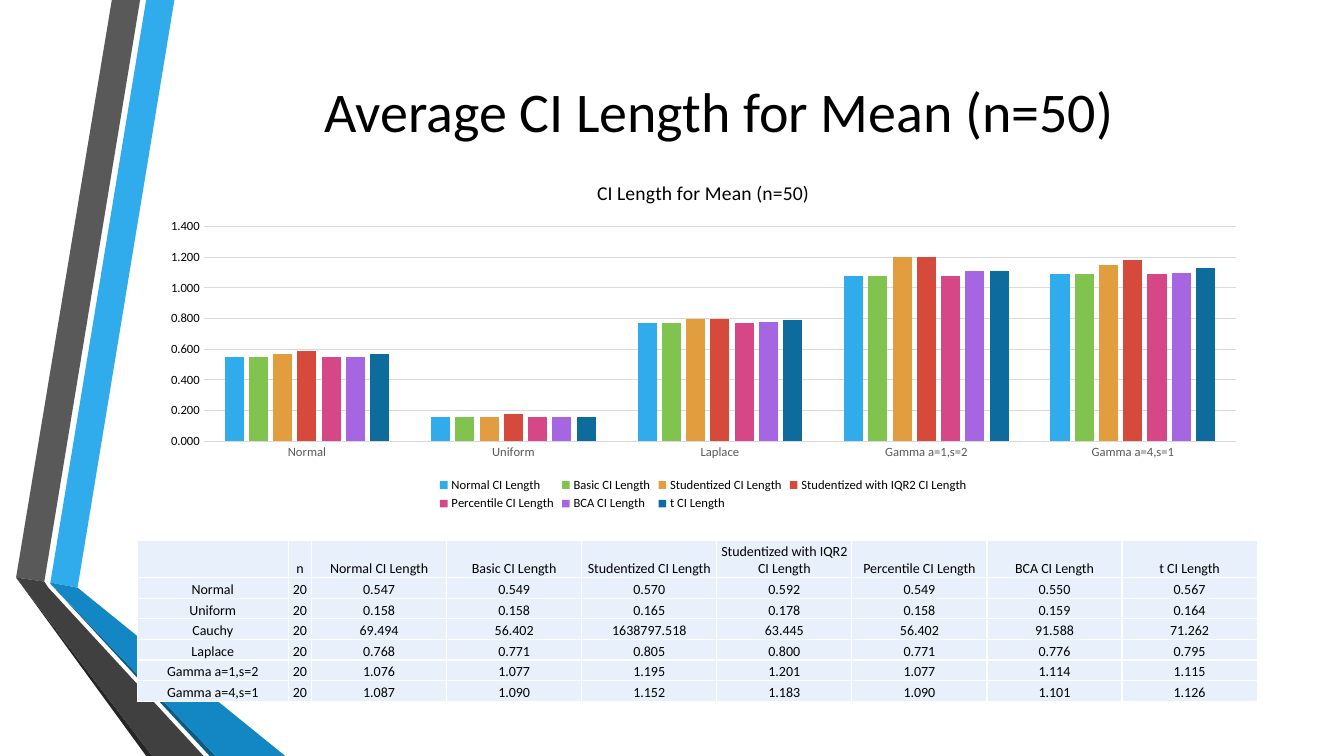
from pptx import Presentation
from pptx.util import Inches, Pt
from pptx.dml.color import RGBColor as RGB
from pptx.chart.data import CategoryChartData as ChartData
from pptx.enum.chart import XL_CHART_TYPE as Kind, XL_LEGEND_POSITION as Spot, XL_TICK_MARK as Tick
from pptx.enum.text import MSO_ANCHOR as Anchor, PP_ALIGN as Align
from pptx.oxml import parse_xml
from pptx.oxml.ns import nsdecls, qn

BLACK = RGB(0, 0, 0)
GRAY = RGB(0x59, 0x59, 0x59)
RULE = RGB(0xD9, 0xD9, 0xD9)
PALE = RGB(0xE8, 0xF1, 0xFB)
BLUE = RGB(0x30, 0xAC, 0xEC)
NAVY = RGB(0x0C, 0x5A, 0x82)
DEEP = RGB(0x12, 0x87, 0xC3)
DARK = RGB(0x26, 0x26, 0x26)
COAL = RGB(0x40, 0x40, 0x40)
GREEN = RGB(0x80, 0xC3, 0x4F)
GOLD = RGB(0xE2, 0x9D, 0x3E)
RED = RGB(0xD6, 0x4A, 0x3B)
PINK = RGB(0xD6, 0x47, 0x87)
VIOLET = RGB(0xA6, 0x66, 0xE1)
TEAL = RGB(0x0E, 0x6C, 0x9C)
FACE = "Calibri"


def style(font, size, color=BLACK):
    font.name, font.size, font.bold = FACE, Pt(size), False
    font.color.rgb = color


def write(frame, text, size=10, color=BLACK, align=Align.CENTER):
    para = frame.paragraphs[0]
    para.alignment = align
    run = para.add_run()
    run.text = text
    style(run.font, size, color)


deck = Presentation()
deck.slide_width, deck.slide_height = Inches(13.33), Inches(7.5)
slide = deck.slides.add_slide(deck.slide_layouts[5])
shapes = slide.shapes

ribbons = [
    (BLUE, [(0.5, 5.78), (0.77, 5.83), (1.73, 0), (1.45, 0)]),
    (GRAY, [(1.39, 0), (1.11, 0), (0.16, 5.73), (0.44, 5.77)]),
    (DARK, [(0.16, 5.73), (1.45, 7.5), (1.51, 7.5)]),
    (NAVY, [(0.5, 5.79), (2.08, 7.5), (2.14, 7.5)]),
    (DEEP, [(0.5, 5.79), (2.14, 7.5), (2.83, 7.5), (0.77, 5.83), (0.5, 5.78)]),
    (COAL, [(2.02, 7.5), (0.48, 5.83), (0.44, 5.77), (0.16, 5.73), (1.51, 7.5)]),
]
for color, points in ribbons:
    start, *rest = [(Inches(x), Inches(y)) for x, y in points]
    path = shapes.build_freeform(*start)
    path.add_line_segments(rest, close=True)
    ribbon = path.convert_to_shape()
    ribbon.shadow.inherit = False
    ribbon.fill.solid()
    ribbon.fill.fore_color.rgb = color
    ribbon.line.fill.background()

title = shapes.title
title.left, title.top = Inches(1.65), Inches(0.13)
title.width, title.height = Inches(10.96), Inches(1.92)
title.text_frame.vertical_anchor = Anchor.MIDDLE
write(title.text_frame, "Average CI Length for Mean (n=50)", size=40)

laws = ["Normal", "Uniform", "Laplace", "Gamma a=1,s=2", "Gamma a=4,s=1"]
series = [
    ("Normal CI Length", BLUE, [0.55, 0.16, 0.77, 1.08, 1.09]),
    ("Basic CI Length", GREEN, [0.55, 0.16, 0.77, 1.08, 1.09]),
    ("Studentized CI Length", GOLD, [0.57, 0.16, 0.8, 1.2, 1.15]),
    ("Studentized with IQR2 CI Length", RED, [0.59, 0.18, 0.8, 1.2, 1.18]),
    ("Percentile CI Length", PINK, [0.55, 0.16, 0.77, 1.08, 1.09]),
    ("BCA CI Length", VIOLET, [0.55, 0.16, 0.78, 1.11, 1.1]),
    ("t CI Length", TEAL, [0.57, 0.16, 0.79, 1.11, 1.13]),
]
data = ChartData(number_format="0.000")
data.categories = laws
for name, hue, vals in series:
    data.add_series(name, vals)
chart = shapes.add_chart(Kind.COLUMN_CLUSTERED, Inches(1.47), Inches(1.62),
                         Inches(11.01), Inches(3.49), data).chart
style(chart.font, 10)
chart.has_title = True
write(chart.chart_title.text_frame, "CI Length for Mean (n=50)", size=14)
chart.chart_title.include_in_layout = False
chart.has_legend = True
chart.legend.position = Spot.BOTTOM
chart.legend.include_in_layout = False
style(chart.legend.font, 9)

plot = chart.plots[0]
plot.gap_width, plot.overlap, plot.vary_by_categories = 219, -27, False
for bars, (name, hue, vals) in zip(plot.series, series):
    bars.format.fill.solid()
    bars.format.fill.fore_color.rgb = hue

across, up = chart.category_axis, chart.value_axis
for axis, color in ((across, GRAY), (up, BLACK)):
    axis.major_tick_mark = axis.minor_tick_mark = Tick.NONE
    style(axis.tick_labels.font, 9, color)
up.minimum_scale, up.maximum_scale, up.major_unit = 0, 1.4, 0.2
up.tick_labels.number_format = "0.000"
up.tick_labels.number_format_is_linked = False
up.format.line.fill.background()
for line in (across.format.line, up.major_gridlines.format.line):
    line.color.rgb = RULE
    line.width = Pt(0.75)

area = chart._chartSpace.chart.plotArea
for old in area.findall(qn("c:layout")):
    area.remove(old)
area.insert(0, parse_xml(
    f'<c:layout {nsdecls("c")}><c:manualLayout><c:layoutTarget val="inner"/>'
    '<c:xMode val="edge"/><c:yMode val="edge"/><c:x val="0.05"/><c:y val="0.18"/>'
    '<c:w val="0.93"/><c:h val="0.61"/></c:manualLayout></c:layout>'))

lengths = {
    "Normal": [0.547, 0.549, 0.570, 0.592, 0.549, 0.550, 0.567],
    "Uniform": [0.158, 0.158, 0.165, 0.178, 0.158, 0.159, 0.164],
    "Cauchy": [69.494, 56.402, 1638797.518, 63.445, 56.402, 91.588, 71.262],
    "Laplace": [0.768, 0.771, 0.805, 0.800, 0.771, 0.776, 0.795],
    "Gamma a=1,s=2": [1.076, 1.077, 1.195, 1.201, 1.077, 1.114, 1.115],
    "Gamma a=4,s=1": [1.087, 1.090, 1.152, 1.183, 1.090, 1.101, 1.126],
}
rows = [["", "n"] + [name for name, hue, vals in series]]
rows += [[law, "20"] + [f"{val:.3f}" for val in vals] for law, vals in lengths.items()]
tall, head = 1.6, 0.37
table = shapes.add_table(len(rows), len(rows[0]), Inches(1.36), Inches(5.36),
                         Inches(11.12), Inches(tall)).table
table.first_row = table.horz_banding = False
for col, width in zip(table.columns, [1.5, 0.23] + [1.34] * len(series)):
    col.width = Inches(width)
for row, texts in enumerate(rows):
    table.rows[row].height = Inches((tall - head) / len(lengths) if row else head)
    for col, text in enumerate(texts):
        cell = table.cell(row, col)
        cell.margin_left = cell.margin_right = cell.margin_top = Inches(0.01)
        cell.margin_bottom = 0
        cell.vertical_anchor = Anchor.BOTTOM
        if text:
            write(cell.text_frame, text)
        props = cell._tc.get_or_add_tcPr()
        for side in "LRTB":
            props.append(parse_xml(
                f'<a:ln{side} {nsdecls("a")} w="12700"><a:solidFill>'
                f'<a:srgbClr val="FFFFFF"/></a:solidFill></a:ln{side}>'))
        cell.fill.solid()
        cell.fill.fore_color.rgb = PALE

deck.save("out.pptx")
